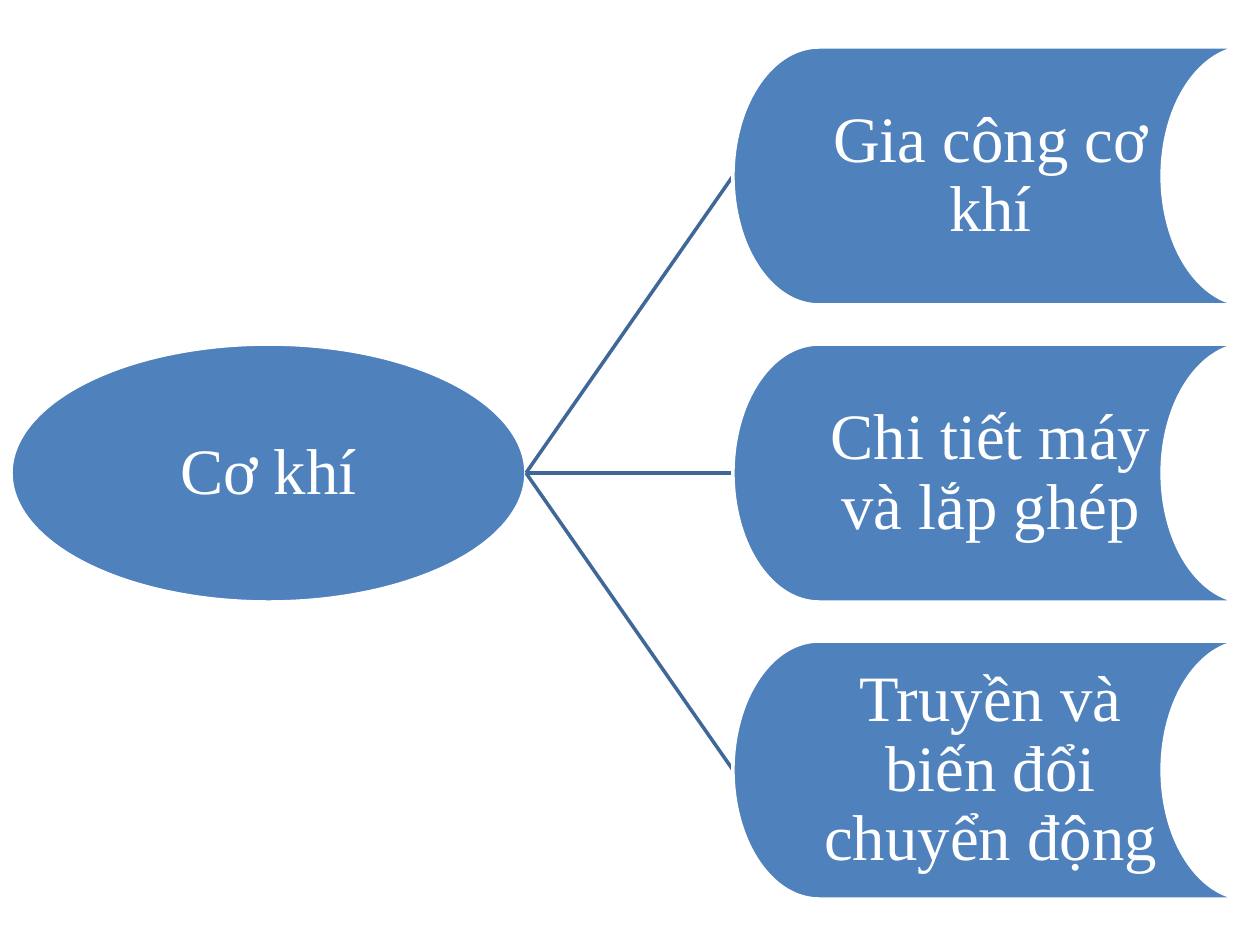
"""Build a slide that splits mechanics into its three branches."""
from dataclasses import dataclass

from lxml import etree
from pptx import Presentation
from pptx.dml.color import RGBColor
from pptx.enum.shapes import MSO_CONNECTOR, MSO_SHAPE
from pptx.enum.text import MSO_ANCHOR, PP_ALIGN
from pptx.oxml.ns import qn
from pptx.slide import Slide
from pptx.util import Emu, Pt

ELLIPSE = MSO_SHAPE.OVAL
STORAGE = MSO_SHAPE.FLOWCHART_STORED_DATA
STRAIGHT = MSO_CONNECTOR.STRAIGHT
MIDDLE = MSO_ANCHOR.MIDDLE
CENTER = PP_ALIGN.CENTER

PX_PER_INCH = 126
COLORS = {"node": "4F81BD", "link": "3F6797", "white": "FFFFFF"}
FONT = "Times New Roman"
FONT_SIZE = 37
LINE_WIDTH = 2
INSET = 4

NODE_WIDTH, NODE_HEIGHT = 515, 258
ROOT_LEFT, BRANCH_LEFT = 11, 733
FIRST_TOP, ROW_STEP = 47, 297
ROOT_LABEL = "Cơ khí"
BRANCH_LABELS = (
    "Gia công cơ khí",
    "Chi tiết máy và lắp ghép",
    "Truyền và biến đổi chuyển động",
)


@dataclass(frozen=True)
class Node:
    """A labelled node with its position in px."""

    label: str
    left: int
    top: int
    preset: MSO_SHAPE

    @property
    def right(self) -> int:
        """Return the right edge."""
        return self.left + NODE_WIDTH

    @property
    def middle(self) -> int:
        """Return the vertical centre."""
        return self.top + NODE_HEIGHT // 2


def px(length: int) -> Emu:
    """Turn px into EMU."""
    return Emu(round(length * 914400 / PX_PER_INCH))


def color(name: str) -> RGBColor:
    """Look up a named colour."""
    return RGBColor.from_string(COLORS[name])


def draw_node(page: Slide, node: Node) -> None:
    """Draw a filled node with its centred label."""
    shape = page.shapes.add_shape(
        node.preset, px(node.left), px(node.top), px(NODE_WIDTH), px(NODE_HEIGHT)
    )
    shape.shadow.inherit = False
    shape.fill.solid()
    shape.fill.fore_color.rgb = color("node")
    shape.line.color.rgb = color("white")
    shape.line.width = Pt(LINE_WIDTH)
    box = shape.text_frame
    box.word_wrap = True
    box.vertical_anchor = MIDDLE
    box.margin_left = box.margin_right = px(INSET)
    box.margin_top = box.margin_bottom = px(INSET)
    para = box.paragraphs[0]
    para.alignment = CENTER
    para.line_spacing = 0.9
    span = para.add_run()
    span.text = node.label
    span.font.name = FONT
    span.font.size = Pt(FONT_SIZE)
    span.font.color.rgb = color("white")


def draw_link(page: Slide, start: Node, end: Node) -> None:
    """Draw a line from the right of one node to the left of another."""
    link = page.shapes.add_connector(
        STRAIGHT, px(start.right), px(start.middle), px(end.left), px(end.middle)
    )
    link.line.color.rgb = color("link")
    link.line.width = Pt(LINE_WIDTH)
    etree.SubElement(link._element.spPr, qn("a:effectLst"))


def main() -> None:
    """Build and save the deck."""
    deck = Presentation()
    deck.slide_width, deck.slide_height = px(1260), px(945)
    page = deck.slides.add_slide(deck.slide_layouts[6])
    root = Node(ROOT_LABEL, ROOT_LEFT, FIRST_TOP + ROW_STEP, ELLIPSE)
    draw_node(page, root)
    for row, label in enumerate(BRANCH_LABELS):
        branch = Node(label, BRANCH_LEFT, FIRST_TOP + row * ROW_STEP, STORAGE)
        draw_link(page, root, branch)
        draw_node(page, branch)
    deck.save("out.pptx")


if __name__ == "__main__":
    main()
